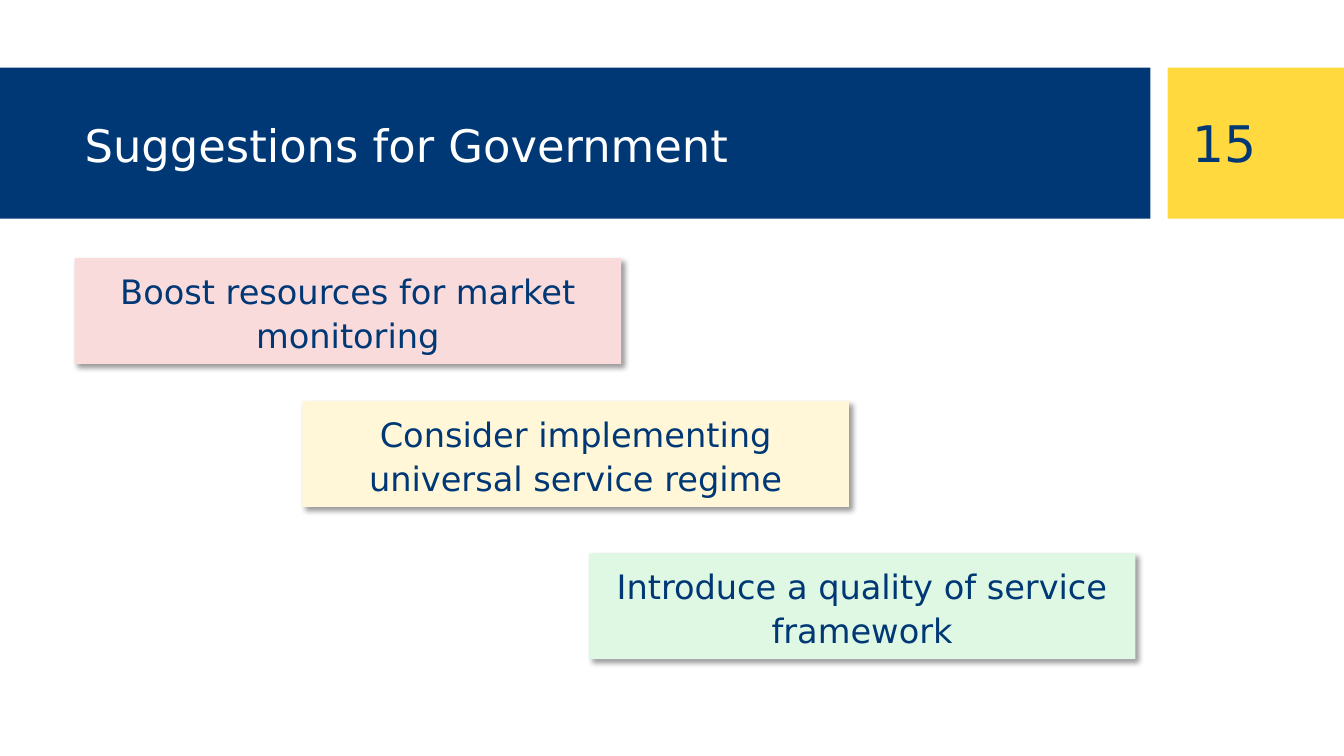
from lxml import etree
from pptx import Presentation
from pptx.dml.color import RGBColor
from pptx.enum.shapes import MSO_SHAPE
from pptx.enum.text import MSO_ANCHOR, MSO_AUTO_SIZE, PP_ALIGN
from pptx.oxml.ns import qn
from pptx.util import Inches, Pt

TITLE_ONLY = 5
BAND_TOP, BAND_HEIGHT = 0.67, 1.5
CARD_WIDTH, CARD_HEIGHT = 5.42, 1.05


def colour(value):
    return RGBColor.from_string(value)


def write_text(shape, text, size, ink, font, align=PP_ALIGN.LEFT, spacing=None):
    """Fill a shape with one vertically centred, formatted paragraph."""
    frame = shape.text_frame
    frame.word_wrap = True
    frame.vertical_anchor = MSO_ANCHOR.MIDDLE
    para = frame.paragraphs[0]
    para.alignment = align
    para.line_spacing = spacing
    span = para.add_run()
    span.text = text
    span.font.size = Pt(size)
    span.font.name = font
    span.font.color.rgb = colour(ink)
    return frame


def add_soft_shadow(shape):
    """Cast a blurred black shadow towards the lower right."""
    effects = shape._element.spPr.find(qn("a:effectLst"))
    shadow = etree.SubElement(effects, qn("a:outerShdw"), blurRad=str(Pt(4)),
                              dist=str(Pt(3)), dir=str(45 * 60000),
                              algn="tl", rotWithShape="0")
    black = etree.SubElement(shadow, qn("a:srgbClr"), val="000000")
    etree.SubElement(black, qn("a:alpha"), val="40000")


class SlideBuilder:
    font = "DejaVu Sans"
    navy = "003775"
    yellow = "FFD93D"
    white = "FFFFFF"

    def __init__(self, page):
        self.page = page

    def rectangle(self, left, top, width, height, fill):
        box = self.page.shapes.add_shape(
            MSO_SHAPE.RECTANGLE, Inches(left), Inches(top), Inches(width), Inches(height))
        box.shadow.inherit = False
        box.fill.solid()
        box.fill.fore_color.rgb = colour(fill)
        box.line.fill.background()
        return box

    def title(self, text, left, top, width, height):
        title = self.page.shapes.title
        title.left, title.top = Inches(left), Inches(top)
        title.width, title.height = Inches(width), Inches(height)
        # Bring the title in front of the band
        self.page.shapes._spTree.append(title._element)
        frame = write_text(title, text, 32, self.white, self.font, spacing=1.1)
        frame.auto_size = MSO_AUTO_SIZE.NONE

    def page_number(self, text, left, top, width, height):
        box = self.page.shapes.add_textbox(
            Inches(left), Inches(top), Inches(width), Inches(height))
        write_text(box, text, 36, self.navy, self.font)

    def card(self, text, left, top, fill):
        box = self.rectangle(left, top, CARD_WIDTH, CARD_HEIGHT, fill)
        add_soft_shadow(box)
        frame = write_text(box, text, 24, self.navy, self.font,
                           align=PP_ALIGN.CENTER, spacing=1.1)
        frame.margin_left = frame.margin_right = Inches(0.1)
        frame.margin_top = frame.margin_bottom = Inches(0.1)
        frame.auto_size = MSO_AUTO_SIZE.SHAPE_TO_FIT_TEXT


def main():
    deck = Presentation()
    deck.slide_width, deck.slide_height = Inches(13.33), Inches(7.5)
    builder = SlideBuilder(deck.slides.add_slide(deck.slide_layouts[TITLE_ONLY]))

    # Header band with title and page number
    builder.rectangle(0, BAND_TOP, 11.41, BAND_HEIGHT, builder.navy)
    builder.rectangle(11.58, BAND_TOP, 1.75, BAND_HEIGHT, builder.yellow)
    builder.title("Suggestions for Government", 0.74, 0.82, 10.51, 1.18)
    builder.page_number("15", 11.73, 0.82, 1.26, 1.19)

    # Suggestions, stepping down to the right
    suggestions = [
        ("Boost resources for market monitoring", 0.74, 2.56, "FADBDC"),
        ("Consider implementing universal service regime", 3, 3.98, "FFF7D8"),
        ("Introduce a quality of service framework", 5.84, 5.49, "DFF8E3"),
    ]
    for text, left, top, fill in suggestions:
        builder.card(text, left, top, fill)

    deck.save("out.pptx")


if __name__ == "__main__":
    main()
